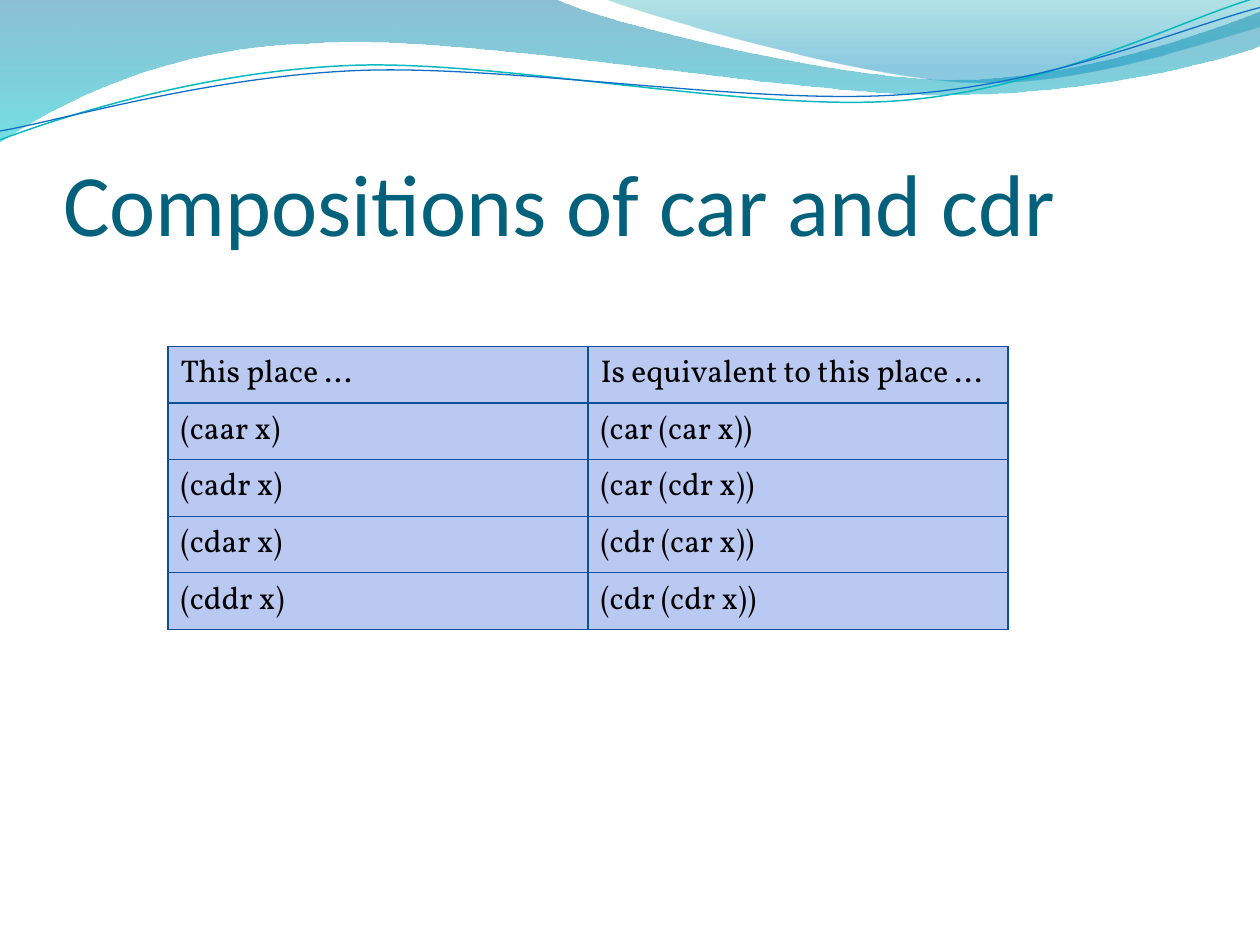
from dataclasses import dataclass
from math import cos, radians, sin

from pptx import Presentation
from pptx.dml.color import RGBColor
from pptx.enum.text import MSO_ANCHOR, MSO_AUTO_SIZE, PP_ALIGN
from pptx.oxml.ns import qn
from pptx.oxml.xmlchemy import OxmlElement
from pptx.util import Inches, Pt

UNIT = Inches(1)  # the slide is a grid of 10 columns by 7.5 rows
COLS, ROWS = 10, 7.5
TILT = -2.7  # degrees
PIVOT = (4.99, 0.58)

TEAL = RGBColor(0x04, 0x61, 0x7B)
BLACK = RGBColor(0, 0, 0)
CELL = RGBColor(0xBA, 0xC9, 0xF2)
BORDER = RGBColor(0x09, 0x52, 0x95)

Point = tuple[float, float]


@dataclass
class Stop:
    place: float
    color: RGBColor
    alpha: int


@dataclass
class Band:
    """Filled wave; a piece has one point for a line, three for a curve."""
    start: Point
    pieces: list[tuple[Point, ...]]
    stops: tuple[Stop, Stop]


@dataclass
class Strand:
    start: Point
    pieces: list[tuple[Point, ...]]
    color: RGBColor
    width: float


BANDS = [
    Band((0, 0), [
        ((4.4, -0.01),),
        ((4.76, 0.17), (6.64, 0.63), (7.58, 0.63)),
        ((8.53, 0.63), (9.58, 0.26), (10, 0.09)),
        ((10.01, 0.36),),
        ((9.83, 0.44), (8.7, 0.76), (7.46, 0.75)),
        ((6.22, 0.75), (3.82, 0.28), (2.57, 0.34)),
        ((1.29, 0.36), (0.46, 0.83), (-0.01, 1.13)),
    ], (Stop(0, RGBColor(0x00, 0x74, 0xA1), 45),
        Stop(1, RGBColor(0x00, 0xC6, 0xCF), 55))),
    Band((4.79, -0.01), [
        ((5.09, 0.11), (6.82, 0.62), (7.69, 0.65)),
        ((8.56, 0.69), (9.61, 0.32), (10, 0.21)),
        ((10, 0),),
    ], (Stop(0, RGBColor(0x00, 0xA1, 0xA9), 30),
        Stop(0.8, RGBColor(0x00, 0x8B, 0xBF), 45))),
]
STRANDS = [
    Strand((0, 1.11), [
        ((0.48, 0.93), (1.58, 0.57), (2.77, 0.52)),
        ((3.95, 0.47), (5.93, 0.89), (7.13, 0.8)),
        ((8.33, 0.71), (9.38, 0.15), (9.98, -0.02)),
    ], RGBColor(0x0A, 0xB8, 0xBF), 0.85),
    Strand((0, 1.04), [
        ((0.47, 0.96), (1.64, 0.61), (2.83, 0.56)),
        ((4.03, 0.51), (5.97, 0.84), (7.17, 0.75)),
        ((8.36, 0.67), (9.41, 0.21), (10, 0.06)),
    ], RGBColor(0x0F, 0x6F, 0xC6), 0.75),
]
PLACES = [
    ("This place ...", "Is equivalent to this place ..."),
    ("(caar x)", "(car (car x))"),
    ("(cadr x)", "(car (cdr x))"),
    ("(cdar x)", "(cdr (car x))"),
    ("(cddr x)", "(cdr (cdr x))"),
]


def grid(*sizes: float) -> list[int]:
    return [round(size * UNIT) for size in sizes]


def level(point: Point, tilt: float) -> list[int]:
    """Undo the tilt of a point, as the shape itself is turned."""
    turn = radians(-tilt)
    x, y = point[0] - PIVOT[0], point[1] - PIVOT[1]
    return grid(PIVOT[0] + x * cos(turn) - y * sin(turn),
                PIVOT[1] + x * sin(turn) + y * cos(turn))


def outline(slide, wave: Band | Strand, close: bool, tilt: float = 0):
    """Draw the pieces as lines, then bend those that have control points."""
    pieces = [[level(point, tilt) for point in piece] for piece in wave.pieces]
    pen = slide.shapes.build_freeform(*level(wave.start, tilt))
    pen.add_line_segments([piece[-1] for piece in pieces], close=close)
    shape = pen.convert_to_shape()
    shape.shadow.inherit = False
    edges = list(shape._element.spPr.iter(qn("a:lnTo")))
    for edge, piece in zip(edges, pieces):
        if len(piece) == 3:
            curve = OxmlElement("a:cubicBezTo")
            for x, y in piece:
                knot = OxmlElement("a:pt")
                knot.set("x", str(x - shape.left))
                knot.set("y", str(y - shape.top))
                curve.append(knot)
            edge.getparent().replace(edge, curve)
    shape.rotation = tilt
    return shape


def add_band(slide, band: Band) -> None:
    shape = outline(slide, band, True)
    shape.line.fill.background()
    shape.fill.gradient()
    shape.fill.gradient_angle = 270
    for mark, stop in zip(shape.fill.gradient_stops, band.stops):
        mark.position = stop.place
        mark.color.rgb = stop.color
    tints = shape._element.spPr.iter(qn("a:srgbClr"))
    for tint, stop in zip(tints, band.stops):
        alpha = OxmlElement("a:alpha")
        alpha.set("val", str(stop.alpha * 1000))
        tint.append(alpha)


def add_strand(slide, strand: Strand) -> None:
    shape = outline(slide, strand, False, TILT)
    shape.fill.background()
    shape.line.color.rgb = strand.color
    shape.line.width = Pt(strand.width)


def set_font(text, name: str, size: float, color: RGBColor) -> None:
    font = text.paragraphs[0].font
    font.name, font.size, font.color.rgb = name, Pt(size), color


def set_title(slide, words: str) -> None:
    title = slide.shapes.title
    title.left, title.top, title.width, title.height = grid(0.5, 0.77, 9, 1.25)
    text = title.text_frame
    text.text = words
    text.auto_size = MSO_AUTO_SIZE.NONE
    text.vertical_anchor = MSO_ANCHOR.BOTTOM
    text.margin_left = text.margin_right = text.margin_bottom = 0
    text.margin_top = Inches(0.05)
    text.paragraphs[0].alignment = PP_ALIGN.LEFT
    set_font(text, "Calibri", 50, TEAL)
    slide.shapes._spTree.append(title._element)  # in front of the waves


def add_border(cell) -> None:
    props = cell._tc.get_or_add_tcPr()
    for spot, side in enumerate(("a:lnL", "a:lnR", "a:lnT", "a:lnB")):
        line = OxmlElement(side)
        line.set("w", str(Pt(0.75)))
        fill = OxmlElement("a:solidFill")
        color = OxmlElement("a:srgbClr")
        color.set("val", str(BORDER))
        fill.append(color)
        line.append(fill)
        props.insert(spot, line)


def add_places(slide) -> None:
    frame = slide.shapes.add_table(len(PLACES), len(PLACES[0]),
                                   *grid(COLS * 2 / 15, 2.75, COLS * 2 / 3, 2))
    table = frame.table
    table.first_row = table.horz_banding = False
    for row, words in enumerate(PLACES):
        for col, word in enumerate(words):
            cell = table.cell(row, col)
            cell.text = word
            cell.vertical_anchor = MSO_ANCHOR.MIDDLE
            cell.fill.solid()
            cell.fill.fore_color.rgb = CELL
            set_font(cell.text_frame, "Vollkorn", 18, BLACK)
            add_border(cell)


def main() -> None:
    deck = Presentation()
    deck.slide_width, deck.slide_height = grid(COLS, ROWS)
    slide = deck.slides.add_slide(deck.slide_layouts.get_by_name("Title Only"))
    for band in BANDS:
        add_band(slide, band)
    for strand in STRANDS:
        add_strand(slide, strand)
    set_title(slide, "Compositions of car and cdr")
    add_places(slide)
    deck.save("out.pptx")


if __name__ == "__main__":
    main()
